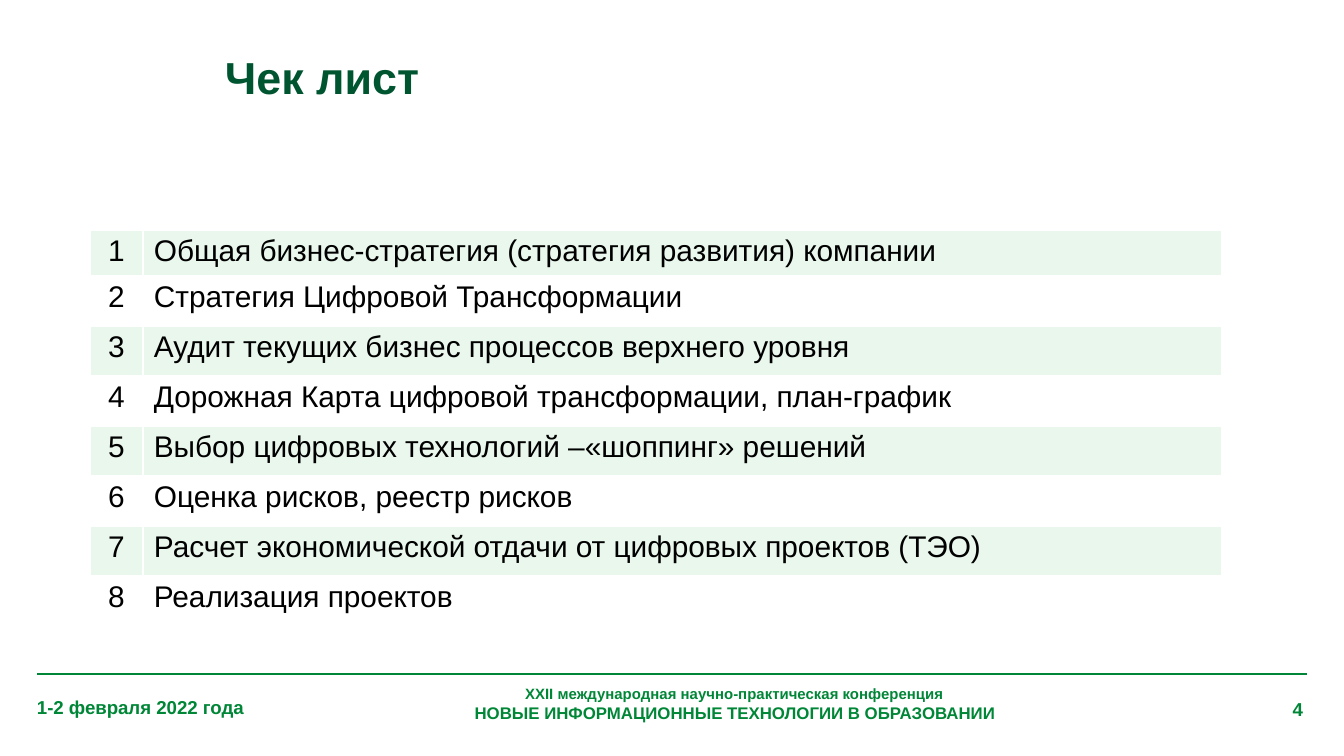
from lxml import etree
from pptx import Presentation
from pptx.dml.color import RGBColor
from pptx.enum.shapes import MSO_CONNECTOR
from pptx.enum.text import MSO_ANCHOR, PP_ALIGN
from pptx.oxml.ns import qn
from pptx.util import Pt

LEFT, CENTER, RIGHT = PP_ALIGN.LEFT, PP_ALIGN.CENTER, PP_ALIGN.RIGHT
TOP, MIDDLE = MSO_ANCHOR.TOP, MSO_ANCHOR.MIDDLE
STRAIGHT = MSO_CONNECTOR.STRAIGHT
SCALE = 914400 / 134.4
COLORS = {
    "title": "005531",
    "green": "008637",
    "band": "E9F7ED",
    "white": "FFFFFF",
    "black": "000000",
}
STEPS = [
    "Общая бизнес-стратегия (стратегия развития) компании",
    "Стратегия Цифровой Трансформации",
    "Аудит текущих бизнес процессов верхнего уровня",
    "Дорожная Карта цифровой трансформации, план-график",
    "Выбор цифровых технологий –«шоппинг» решений",
    "Оценка рисков, реестр рисков",
    "Расчет экономической отдачи от цифровых проектов (ТЭО)",
    "Реализация проектов",
]


def px(*values):
    return [round(v * SCALE) for v in values]


def rgb(name):
    return RGBColor.from_string(COLORS[name])


class Deck:
    font = "Arial"

    def __init__(self, width, height):
        self.file = Presentation()
        self.file.slide_width, self.file.slide_height = px(width, height)
        self.slide = self.file.slides.add_slide(self.file.slide_layouts[5])

    def style(self, frame, text, sizes, color, bold=False, align=LEFT):
        frame.text = text
        para = frame.paragraphs[0]
        para.alignment = align
        for run, size in zip(para.runs, sizes):
            run.font.name = self.font
            run.font.size = Pt(size)
            run.font.bold = bold
            run.font.color.rgb = rgb(color)

    def pad(self, item, side, edge=0):
        item.margin_left, item.margin_right = px(side, side)
        item.margin_top, item.margin_bottom = px(edge, edge)

    def title(self, box, text):
        shape = self.slide.shapes.title
        shape.left, shape.top, shape.width, shape.height = px(*box)
        frame = shape.text_frame
        self.pad(frame, 8)
        frame.vertical_anchor = MIDDLE
        self.style(frame, text, [24], "title", True)

    def text(self, box, text, sizes, align=LEFT, anchor=TOP):
        frame = self.slide.shapes.add_textbox(*px(*box)).text_frame
        frame.word_wrap = True
        frame.vertical_anchor = anchor
        self.pad(frame, 0)
        self.style(frame, text, sizes, "green", True, align)

    def line(self, left, right, y):
        rule = self.slide.shapes.add_connector(STRAIGHT, *px(left, y, right, y))
        rule.line.color.rgb = rgb("green")
        rule.line.width = Pt(0.75)
        etree.SubElement(rule._element.spPr, qn("a:effectLst"))

    def border(self, cell):
        props = cell._tc.get_or_add_tcPr()
        for side in ("lnL", "lnR", "lnT", "lnB"):
            edge = etree.SubElement(props, qn(f"a:{side}"), w=str(Pt(1)))
            fill = etree.SubElement(edge, qn("a:solidFill"))
            etree.SubElement(fill, qn("a:srgbClr"), val=COLORS["white"])

    def table(self, left, top, cols, rows, items):
        box = px(left, top, sum(cols), sum(rows))
        grid = self.slide.shapes.add_table(len(rows), len(cols), *box).table
        grid.first_row = grid.horz_banding = False
        for col, width in zip(grid.columns, px(*cols)):
            col.width = width
        for row, height in zip(grid.rows, px(*rows)):
            row.height = height
        for i, item in enumerate(items):
            pair = ((str(i + 1), CENTER), (item, LEFT))
            for cell, (text, align) in zip(grid.rows[i].cells, pair):
                self.pad(cell, 11, 5)
                self.border(cell)
                cell.fill.solid()
                cell.fill.fore_color.rgb = rgb("white" if i % 2 else "band")
                self.style(cell.text_frame, text, [16], "black", align=align)


def main():
    deck = Deck(1344, 756)
    deck.line(37, 1307, 674)
    deck.text((37, 696, 254, 23), "1-2 февраля 2022 года", [10], anchor=MIDDLE)
    deck.text(
        (248, 685, 973, 39),
        "XXII международная научно-практическая конференция\v"
        "НОВЫЕ ИНФОРМАЦИОННЫЕ ТЕХНОЛОГИИ В ОБРАЗОВАНИИ",
        [8, 9],
        CENTER,
    )
    deck.text((1191, 698, 112, 23), "4", [10], RIGHT)
    deck.table(90, 230, [53, 1079], [46] + [50] * 7, STEPS)
    deck.title((217, 50, 1059, 54), "Чек лист")
    deck.file.save("out.pptx")


if __name__ == "__main__":
    main()
